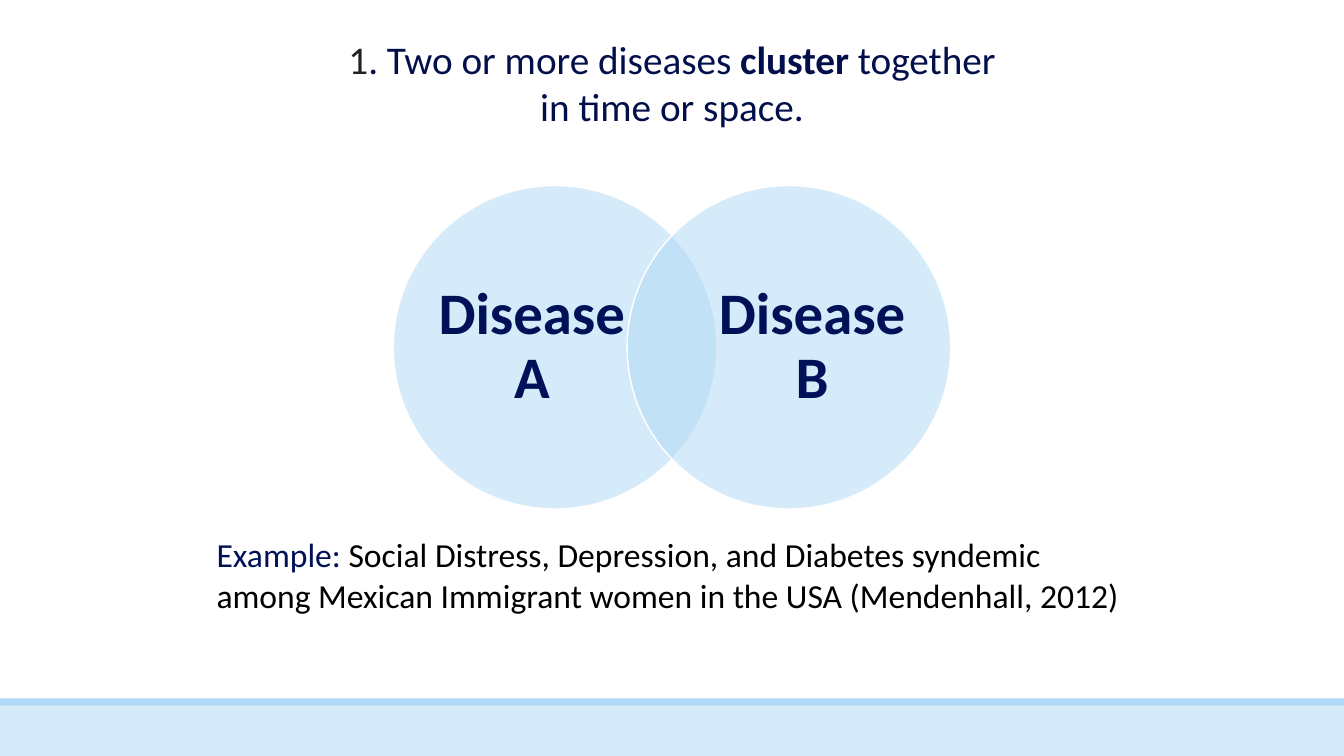
from lxml import etree
from pptx import Presentation
from pptx.dml.color import RGBColor
from pptx.enum.shapes import MSO_SHAPE
from pptx.enum.text import MSO_ANCHOR, PP_ALIGN
from pptx.oxml.ns import qn
from pptx.util import Inches, Pt

RECTANGLE, OVAL = MSO_SHAPE.RECTANGLE, MSO_SHAPE.OVAL
TOP, MIDDLE = MSO_ANCHOR.TOP, MSO_ANCHOR.MIDDLE
LEFT, CENTER = PP_ALIGN.LEFT, PP_ALIGN.CENTER

WHITE = RGBColor(0xFF, 0xFF, 0xFF)
BLACK = RGBColor(0x00, 0x00, 0x00)
CHARCOAL = RGBColor(0x21, 0x21, 0x21)
NAVY = RGBColor(0x00, 0x11, 0x58)
TITLE_NAVY = RGBColor(0x02, 0x0F, 0x4A)
PALE_BLUE = RGBColor(0xD6, 0xEB, 0xFA)
SKY_BLUE = RGBColor(0xAE, 0xD8, 0xF5)

presentation = Presentation()
presentation.slide_width = Inches(13.33)
presentation.slide_height = Inches(7.5)
slide = presentation.slides.add_slide(presentation.slide_layouts[6])


def add_text(runs, left, top, width, height, size, align=LEFT,
             anchor=TOP, line_spacing=1.0, inset=None):
    """Add a text box; each run is (text, color, bold)."""
    box = slide.shapes.add_textbox(
        Inches(left), Inches(top), Inches(width), Inches(height))
    frame = box.text_frame
    frame.word_wrap = True
    frame.vertical_anchor = anchor
    if inset is not None:
        frame.margin_left = frame.margin_right = Inches(inset)
        frame.margin_top = frame.margin_bottom = Inches(inset)
    paragraph = frame.paragraphs[0]
    paragraph.alignment = align
    paragraph.line_spacing = line_spacing
    for text, color, bold in runs:
        run = paragraph.add_run()
        run.text = text
        run.font.name = "Calibri"
        run.font.size = Pt(size)
        run.font.bold = bold
        run.font.color.rgb = color


def add_filled_shape(kind, left, top, width, height, color):
    shape = slide.shapes.add_shape(
        kind, Inches(left), Inches(top), Inches(width), Inches(height))
    shape.shadow.inherit = False
    shape.fill.solid()
    shape.fill.fore_color.rgb = color
    shape.line.fill.background()
    return shape


# Footer band
add_filled_shape(RECTANGLE, 0, 7, 13.33, 0.5, PALE_BLUE)
add_filled_shape(RECTANGLE, 0, 6.93, 13.33, 0.07, SKY_BLUE)

# Overlapping disease circles
for label, circle_left, label_left in (
        ("Disease A", 3.9, 4.3), ("Disease B", 6.22, 7.08)):
    circle = add_filled_shape(OVAL, circle_left, 1.84, 3.21, 3.21, SKY_BLUE)
    circle.line.color.rgb = WHITE
    circle.line.width = Pt(1)
    # Half transparent fill
    fill_color = circle.fill._xPr.find(qn("a:solidFill"))[0]
    etree.SubElement(fill_color, qn("a:alpha"), val="50000")
    add_text([(label, NAVY, True)], label_left, 2.22, 1.95, 2.45, size=42,
             align=CENTER, anchor=MIDDLE, line_spacing=0.9, inset=0)

# Title
add_text([("1", CHARCOAL, False),
          (". Two or more diseases ", TITLE_NAVY, False),
          ("cluster", TITLE_NAVY, True),
          (" together in time or space.", TITLE_NAVY, False)],
         3.33, 0.3, 6.67, 1.04, size=28, align=CENTER)

# Example
add_text([("Example: ", NAVY, False),
          ("Social Distress, Depression, and Diabetes syndemic among "
           "Mexican Immigrant women in the USA (Mendenhall, 2012)",
           BLACK, False)],
         2.05, 5.25, 9.23, 0.91, size=24)

presentation.save("out.pptx")
